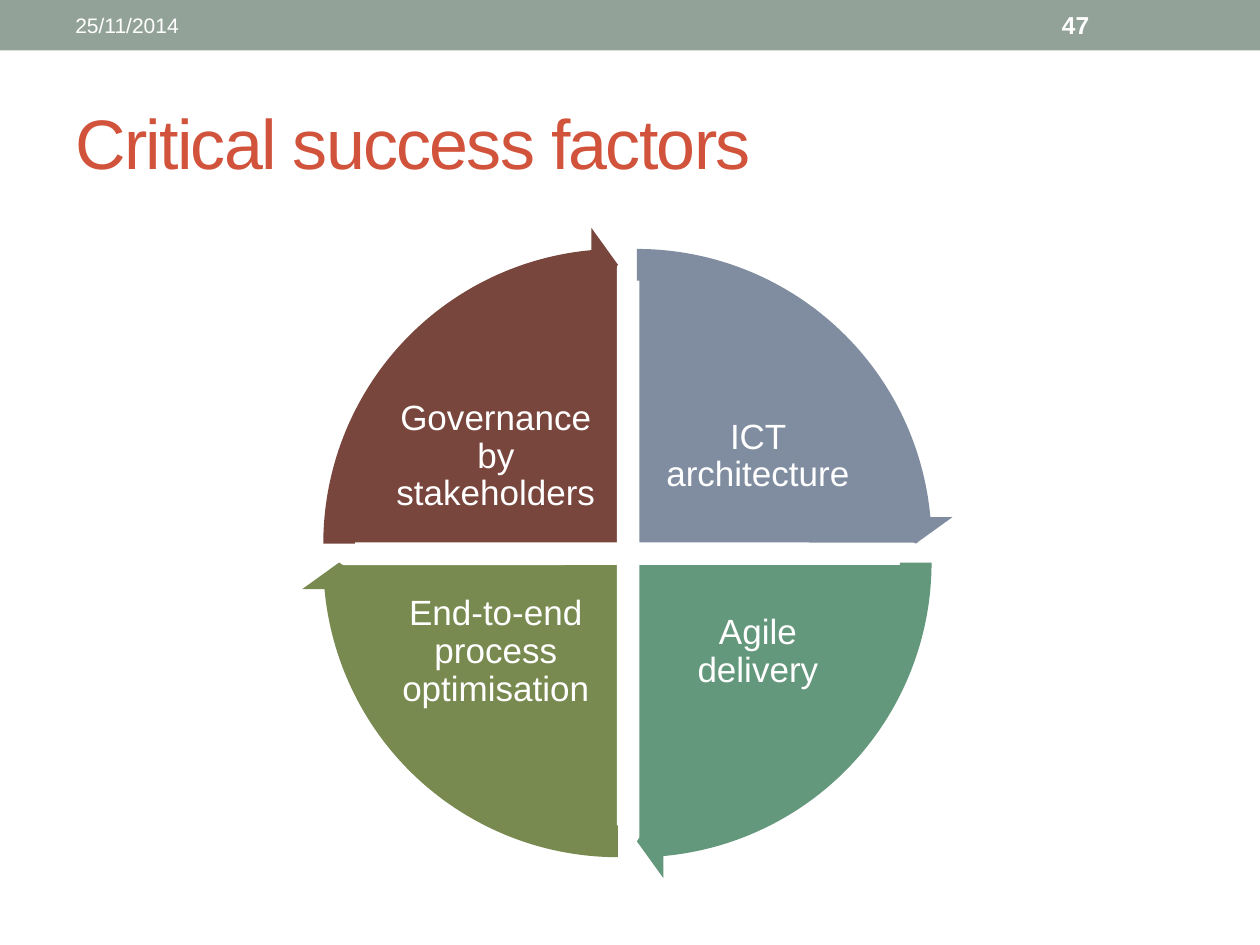
"""Build the critical success factors slide with a four-part cycle."""
from pptx import Presentation
from pptx.dml.color import RGBColor
from pptx.enum.shapes import MSO_SHAPE as SHAPE
from pptx.enum.text import MSO_ANCHOR as ANCHOR, PP_ALIGN as ALIGN
from pptx.util import Inches, Pt

WHITE = RGBColor(0xFF, 0xFF, 0xFF)
SAGE = RGBColor(0x93, 0xA2, 0x99)
RED = RGBColor(0xD2, 0x53, 0x3C)
BLUE = RGBColor(0x80, 0x8D, 0xA0)
TEAL = RGBColor(0x64, 0x98, 0x7C)
OLIVE = RGBColor(0x78, 0x8A, 0x50)
BROWN = RGBColor(0x79, 0x46, 0x3D)

PIE_SIZE, ARROW_SIZE = 4.48, 5.03
QUARTER = 54
ARROW_HEAD = 3.275


def add_shape(kind, x, y, w, h, color, adjustments=()):
    sp = s.shapes.add_shape(kind, Inches(x), Inches(y), Inches(w), Inches(h))
    sp.shadow.inherit = False
    sp.fill.solid()
    sp.fill.fore_color.rgb = color
    sp.line.fill.background()
    for i, value in enumerate(adjustments):
        sp.adjustments[i] = value
    return sp


def add_text(text, x, y, w, h, size, color=WHITE):
    sp = s.shapes.add_textbox(Inches(x), Inches(y), Inches(w), Inches(h))
    tf = sp.text_frame
    tf.word_wrap = True
    tf.vertical_anchor = ANCHOR.MIDDLE
    tf.text = text
    font = tf.paragraphs[0].runs[0].font
    font.name, font.size = "Arial", Pt(size)
    font.color.rgb = color
    return tf


prs = Presentation()
prs.slide_width, prs.slide_height = Inches(10), Inches(7.5)
s = prs.slides.add_slide(prs.slide_layouts[6])

add_shape(SHAPE.RECTANGLE, 0, 0, 10, 0.4, SAGE)
tf = add_text("Critical success factors", 0.5, 0.58, 9, 1.08, 40, RED)
tf.paragraphs[0].runs[0].font._element.set("spc", "-100")

factors = [
    ("ICT architecture", BLUE, 1, 0, 3 * QUARTER),
    ("Agile delivery", TEAL, 1, 1, 0),
    ("End-to-end process optimisation", OLIVE, 0, 1, QUARTER),
    ("Governance by stakeholders", BROWN, 0, 0, 2 * QUARTER),
]

for text, color, col, row, start in factors:
    end = (start + QUARTER) % (4 * QUARTER)
    sp = add_shape(SHAPE.PIE, 2.67 + 0.15 * col, 2.08 + 0.15 * row,
                   PIE_SIZE, PIE_SIZE, color, (start, end))
    sp.line.color.rgb = WHITE
    sp.line.width = Pt(2.08)
    tf = add_text(text, 3.11 + 2.08 * col, 3.01 + 1.55 * row, 1.65, 1.23, 20)
    tf.margin_left = tf.margin_right = Inches(0.03)
    tf.margin_top = tf.margin_bottom = Inches(0.03)
    p = tf.paragraphs[0]
    p.alignment = ALIGN.CENTER
    p.line_spacing = 0.9

for text, color, col, row, start in factors:
    add_shape(SHAPE.CIRCULAR_ARROW, 2.39 + 0.15 * col, 1.8 + 0.15 * row,
              ARROW_SIZE, ARROW_SIZE, color,
              (0.05, ARROW_HEAD, start + QUARTER - ARROW_HEAD, start, 0.06))

add_text("25/11/2014", 0.5, 0.02, 3.17, 0.36, 12)
tf = add_text("47", 8.33, 0.02, 1.17, 0.36, 14)
tf.paragraphs[0].runs[0].font.bold = True

prs.save("out.pptx")
